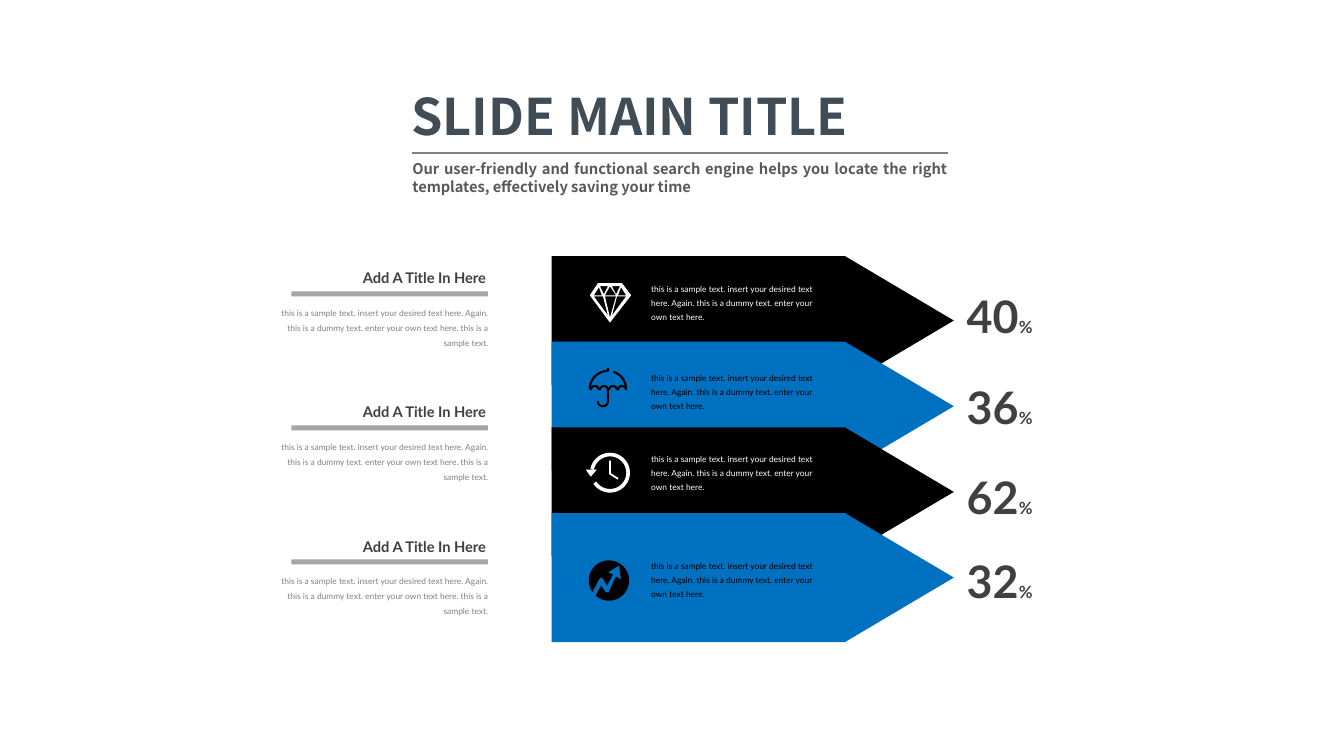
from math import cos, sin, radians
from lxml.etree import SubElement
from pptx import Presentation
from pptx.dml.color import RGBColor
from pptx.enum.shapes import MSO_CONNECTOR, MSO_SHAPE
from pptx.enum.text import MSO_ANCHOR, MSO_AUTO_SIZE, PP_ALIGN
from pptx.oxml.ns import qn
from pptx.util import Inches, Pt

BLACK, BLUE, WHITE = "000000", "0070C0", "FFFFFF"
NOTE = ("this is a sample text. insert your desired text here. Again. "
        "this is a dummy text. enter your own text here.")


def color(code):
    return RGBColor.from_string(code)


def place(shape, x, y, w, h):
    shape.left, shape.top = Inches(x), Inches(y)
    shape.width, shape.height = Inches(w), Inches(h)


def write(shape, *runs, font="Lato", tint=BLACK, bold=False,
          align=PP_ALIGN.LEFT, lead=None, wrap=True):
    frame = shape.text_frame
    frame.word_wrap = wrap
    frame.auto_size = MSO_AUTO_SIZE.NONE
    frame.vertical_anchor = MSO_ANCHOR.TOP
    para = frame.paragraphs[0]
    para.alignment = align
    para.space_before = Pt(0)
    if lead:
        para.line_spacing = Pt(lead)
    for words, size in runs:
        run = para.add_run()
        run.text = words
        run.font.name = font
        run.font.size = Pt(size)
        run.font.bold = bold
        run.font.color.rgb = color(tint)


def label(slide, box, *runs, **style):
    write(slide.shapes.add_textbox(*map(Inches, box)), *runs, **style)


def paint(shape, fill=None, line=None, width=1):
    shape.shadow.inherit = False
    if fill:
        shape.fill.solid()
        shape.fill.fore_color.rgb = color(fill)
    else:
        shape.fill.background()
    if line:
        shape.line.color.rgb = color(line)
        shape.line.width = Pt(width)
    else:
        shape.line.fill.background()


def outline(slide, paths, close=True, **style):
    paths = [[(Inches(x), Inches(y)) for x, y in path] for path in paths]
    pen = slide.shapes.build_freeform(*paths[0][0])
    for i, path in enumerate(paths):
        if i:
            pen.move_to(*path[0])
        pen.add_line_segments(path[1:], close=close)
    paint(pen.convert_to_shape(), **style)


def arc(x, y, radius, start, end, steps=32):
    turns = [radians(start + (end - start) * i / steps) for i in range(steps + 1)]
    return [(x + radius * cos(t), y - radius * sin(t)) for t in turns]


def rule(slide, y, tint):
    line = slide.shapes.add_connector(
        MSO_CONNECTOR.STRAIGHT, Inches(4.09), Inches(y), Inches(9.4), Inches(y))
    line.line.color.rgb = color(tint)
    line.line.width = Pt(1)
    SubElement(line._element.spPr, qn("a:effectLst"))


def arrow(slide, y, fill):
    outline(slide, [[(5.47, y), (8.38, y), (9.46, y + 0.64),
                     (8.38, y + 1.28), (5.47, y + 1.28)]], fill=fill)


def diamond(slide):
    mid = 6.05
    rim = [(5.85, 2.93), (5.93, 2.81), (6.17, 2.81), (6.26, 2.93), (mid, 3.2)]
    center = [[(6, 2.94), (6.11, 2.94), (mid, 3.15)],
              [(6, 2.93), (mid, 2.84), (6.11, 2.93)]]
    left = [[(5.95, 2.84), (6.03, 2.84), (5.99, 2.92)],
            [(5.89, 2.94), (5.98, 2.94), (6.03, 3.13)],
            [(5.89, 2.93), (5.94, 2.85), (5.97, 2.93)]]
    right = [[(2 * mid - x, y) for x, y in facet] for facet in left]
    outline(slide, [rim] + center + left + right, fill=WHITE)


def brolly(slide):
    dome = arc(6.03, 3.86, 0.18, 180, 90) + [(6.03, 3.65)]
    flap = arc(6.03, 3.86, 0.18, 73, 0)
    folds = [arc(5.9 + 0.09 * i, 3.87, 0.04, 180, 0, 12) for i in range(4)]
    stem = [(6.03, 3.85)] + arc(5.98, 3.98, 0.05, 0, -180, 16)
    outline(slide, [dome, flap, stem] + folds, close=False, line=BLACK, width=1.5)


def clock(slide):
    outline(slide, [arc(6.05, 4.69, 0.18, 170, -147)],
            close=False, line=WHITE, width=2.6)
    outline(slide, [[(5.81, 4.66), (5.92, 4.66), (5.86, 4.73)]], fill=WHITE)
    outline(slide, [[(6.05, 4.57), (6.05, 4.7), (6.13, 4.75)]],
            close=False, line=WHITE, width=1.3)


def trend(slide):
    notch = [(5.96, 5.81), (6.01, 5.88), (6.04, 5.87), (6.11, 5.72),
             (6.16, 5.75), (6.14, 5.61), (6.03, 5.68), (6.08, 5.7),
             (6.02, 5.81), (5.98, 5.74), (5.96, 5.73), (5.94, 5.75)]
    outline(slide, [arc(6.04, 5.76, 0.2, 90, -131) + notch
                    + arc(6.04, 5.76, 0.2, 215, 90)], fill=BLACK)


def topic(slide, y):
    label(slide, (3.05, y, 1.87, 0.27), ("Add A Title In Here", 10.5),
          tint="404040", bold=True, align=PP_ALIGN.RIGHT, lead=12)
    label(slide, (2.68, y + 0.32, 2.26, 0.56),
          (NOTE + " this is a sample text.", 6),
          tint="808080", align=PP_ALIGN.RIGHT, lead=11)
    bar = slide.shapes.add_shape(
        MSO_SHAPE.RECTANGLE, *map(Inches, (2.89, y + 0.26, 1.95, 0.05)))
    paint(bar, fill="A5A5A5")


def header(slide):
    title, sub = slide.placeholders
    place(title, 3.98, 0.79, 5.53, 0.71)
    write(title, ("SLIDE MAIN TITLE", 36), font="Noto Sans CJK SC",
          tint="404C56", bold=True, align=PP_ALIGN.JUSTIFY)
    place(sub, 3.99, 1.54, 5.51, 0.47)
    write(sub, ("Our user-friendly and functional search engine helps you locate "
                "the right templates, effectively saving your time", 10.5),
          font="Noto Sans CJK SC", tint="595959", bold=True,
          align=PP_ALIGN.JUSTIFY)
    rule(slide, 1.52, "808080")
    rule(slide, 1.53, WHITE)


def main():
    deck = Presentation()
    deck.slide_width, deck.slide_height = Inches(13.33), Inches(7.5)
    slide = deck.slides.add_slide(deck.slide_layouts[0])
    header(slide)
    for i in range(4):
        arrow(slide, 2.54 + 0.85 * i, (BLACK, BLUE)[i % 2])
    for i in range(3):
        topic(slide, 2.63 + 1.33 * i)
    rows = [(diamond, 2.73, "40", 2.82), (brolly, 3.61, "36", 3.72),
            (clock, 4.42, "62", 4.61), (trend, 5.48, "32", 5.44)]
    for i, (icon, note_y, share, share_y) in enumerate(rows):
        icon(slide)
        label(slide, (6.36, note_y, 1.88, 0.52), (NOTE, 6),
              tint=(WHITE, BLACK)[i % 2], lead=10)
        label(slide, (9.49, share_y, 0.97, 0.64), (share, 32), ("%", 12),
              tint="404040", bold=True, wrap=False)
    deck.save("out.pptx")


if __name__ == "__main__":
    main()
